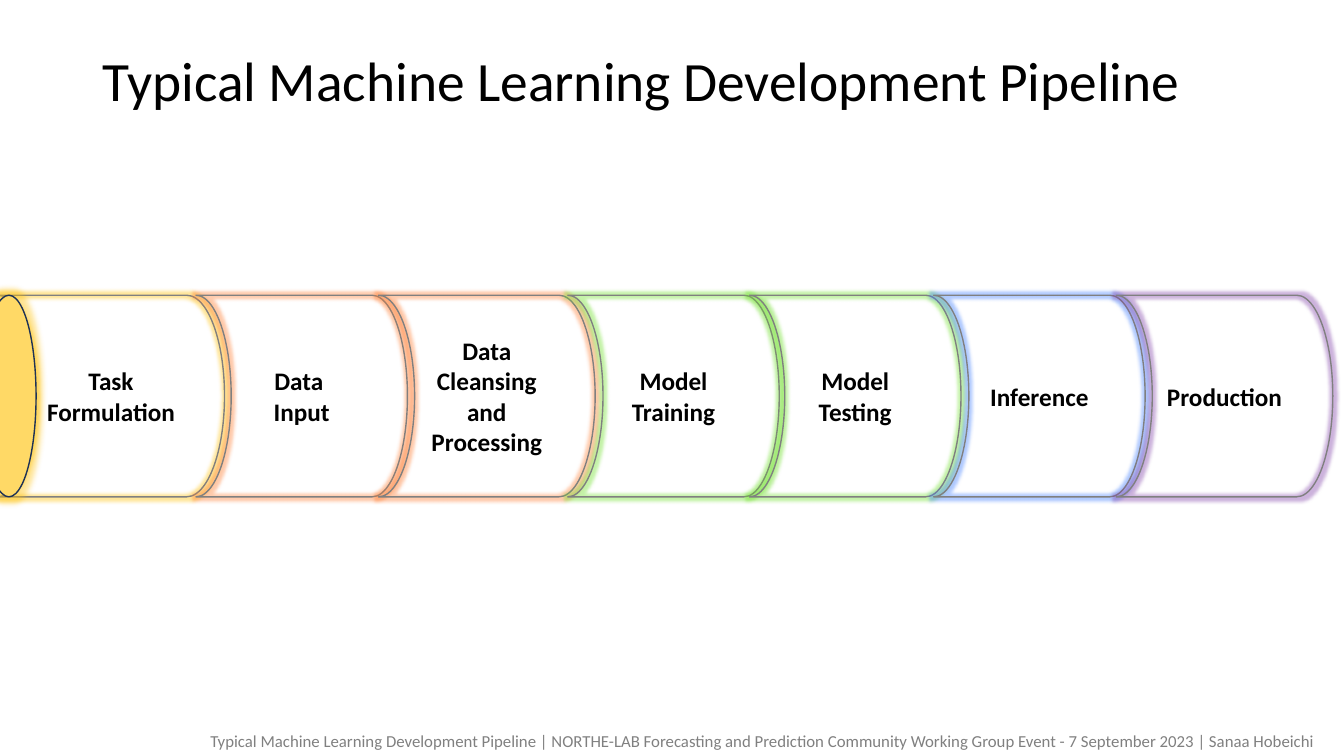
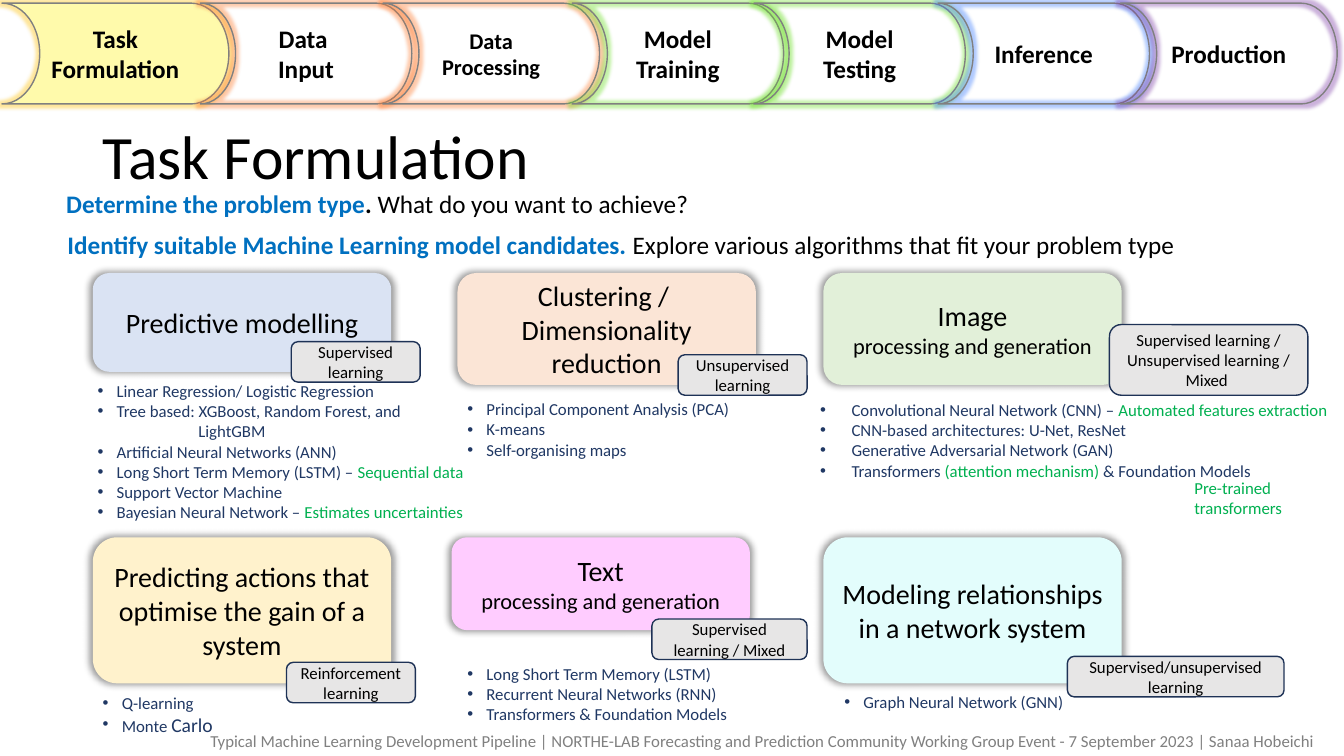
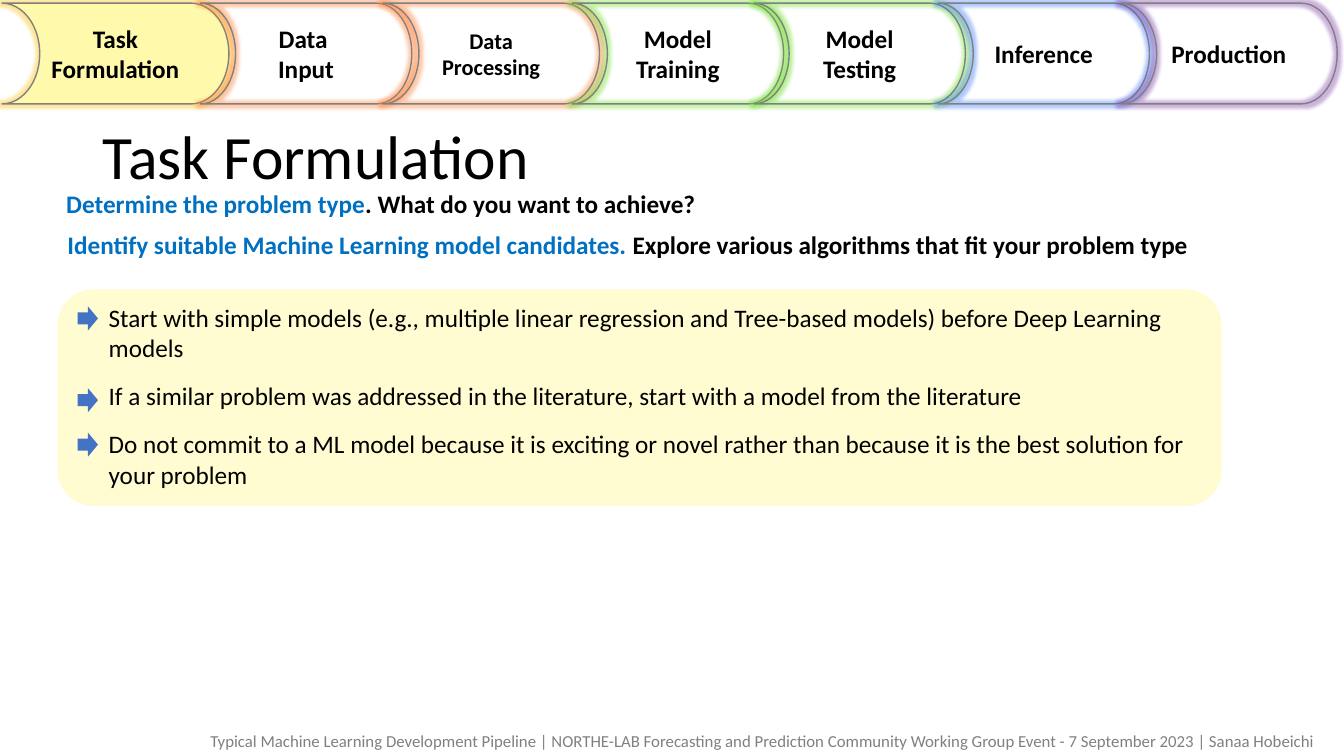
from dataclasses import dataclass

from lxml.etree import SubElement as Sub
from pptx import Presentation
from pptx.dml.color import RGBColor as Rgb
from pptx.enum.shapes import MSO_SHAPE as Kind
from pptx.enum.text import MSO_ANCHOR as Anchor, MSO_AUTO_SIZE as Fit, PP_ALIGN as Align
from pptx.oxml.ns import qn
from pptx.util import Cm, Pt


@dataclass(frozen=True)
class Theme:
    font: str = "Calibri"
    black: str = "000000"
    grey: str = "808080"
    navy: str = "203864"
    edge: str = "1E3256"
    blue: str = "0070C0"
    green: str = "00B050"
    arrow: str = "4472C4"
    tag: str = "E7E6E6"
    panel: str = "FFFCD1"
    active: str = "FFFAAB"
    cap: str = "FFD966"
    gold: str = "FFC000"
    orange: str = "FF7D31"
    lime: str = "6CE026"
    azure: str = "3C7CFF"
    violet: str = "8040A8"
    title: float = 44
    opening: float = 39.6
    card: float = 20
    body: float = 18
    minor: float = 16
    lift: float = 14
    small: float = 12


T = Theme()
FOOTER = ("Typical Machine Learning Development Pipeline | NORTHE-LAB Forecasting and Prediction "
          "Community Working Group Event - 7 September 2023 | Sanaa Hobeichi")

STAGES = [
    (0, 5.72, ["Task Formulation"], T.gold),
    (5, 5.33, ["Data ", "Input"], T.orange),
    (9.6, 5.46, ["Data Cleansing and Processing"], T.orange),
    (14.37, 5.33, ["Model Training"], T.lime),
    (18.95, 5.33, ["Model Testing"], T.lime),
    (23.59, 5.33, ["Inference"], T.azure),
    (28.19, 5.46, ["Production"], T.violet),
]


def style(font, size=None, color=None, bold=None):
    if size:
        font.size = Pt(size)
    if color:
        font.color.rgb = Rgb.from_string(color)
    if bold is not None:
        font.bold = bold


def write(frame, paras, size, color=T.black, bold=False, align=Align.LEFT, gap=0):
    frame.word_wrap = True
    for i, runs in enumerate(paras):
        para = frame.paragraphs[0] if i == 0 else frame.add_paragraph()
        para.alignment = align
        para.font.name = T.font
        style(para.font, size, color, bold)
        if i and gap:
            para.space_before = Pt(gap)
        for part in [runs] if isinstance(runs, str) else runs:
            text, look = (part, {}) if isinstance(part, str) else part
            run = para.add_run()
            run.text = text
            style(run.font, **look)


def place(item, box):
    item.left, item.top, item.width, item.height = map(Cm, box)


def label(slide, box, paras, size, **look):
    frame = slide.shapes.add_textbox(*map(Cm, box)).text_frame
    write(frame, paras, size, **look)
    return frame


def draw(slide, kind, box, fill=None, line=None):
    shape = slide.shapes.add_shape(kind, *map(Cm, box))
    shape.shadow.inherit = False
    if fill:
        shape.fill.solid()
        shape.fill.fore_color.rgb = Rgb.from_string(fill)
    else:
        shape.fill.background()
    if line:
        shape.line.color.rgb = Rgb.from_string(line)
        shape.line.width = Pt(1)
    else:
        shape.line.fill.background()
    shape.text_frame.vertical_anchor = Anchor.MIDDLE
    return shape


def effect(shape, name, color, alpha, **attrs):
    effects = shape._element.spPr.find(qn("a:effectLst"))
    node = Sub(effects, qn(f"a:{name}"), attrs)
    tint = Sub(node, qn("a:srgbClr"), val=color)
    Sub(tint, qn("a:alpha"), val=str(alpha * 1000))


def glow(shape, color, radius):
    effect(shape, "glow", color, 40, rad=str(Pt(radius)))


def bullet(para, indent):
    props = para._p.get_or_add_pPr()
    props.set("marL", str(Cm(indent)))
    props.set("indent", str(-Cm(indent)))
    mark = props.makeelement(qn("a:buChar"), {"char": "•"})
    font = props.makeelement(qn("a:buFont"), {"typeface": "Arial"})
    base = props.find(qn("a:defRPr"))
    base.addprevious(font)
    base.addprevious(mark)


def heading(slide, text, box, size, foot=0.13):
    title = slide.shapes.title
    place(title, box)
    frame = title.text_frame
    frame.auto_size = Fit.NONE
    frame.vertical_anchor = Anchor.MIDDLE
    frame.margin_bottom = Cm(foot)
    write(frame, [text], size)
    frame.paragraphs[0].line_spacing = 0.9


def footer(slide):
    label(slide, (5.05, 18.29, 28.8, 0.76), [FOOTER], T.small, color=T.grey)


def pipeline(slide, left, top, height, active=None, brief=False):
    for i, (shift, width, words, color) in enumerate(STAGES):
        short = brief and i == 2
        pipe = draw(slide, Kind.FLOWCHART_STORED_DATA, (left + shift, top, width, height),
                    T.active if i == active else None, T.grey)
        pipe._element.spPr.xfrm.set("flipH", "1")
        glow(pipe, color, 5)
        write(pipe.text_frame, ["Data Processing"] if short else words,
              T.minor if short else T.body, bold=True, align=Align.CENTER)


def card(slide, box, fill, title, tag, tagbox, items, listbox, indent=0.48):
    left, top = box[:2]

    def inside(part):
        return left + part[0], top + part[1], part[2], part[3]

    face = draw(slide, Kind.ROUNDED_RECTANGLE, box, fill)
    effect(face, "outerShdw", T.black, 40, blurRad=str(Pt(5)), sx="102000", sy="102000",
           algn="ctr", rotWithShape="0")
    write(face.text_frame, title, T.card, align=Align.CENTER)
    frame = label(slide, inside(listbox), items, T.small, color=T.navy)
    for para in frame.paragraphs:
        if para.text == "LightGBM":
            para._p.get_or_add_pPr().set("marL", str(Cm(2.54)))
        else:
            bullet(para, indent)
    badge = draw(slide, Kind.ROUNDED_RECTANGLE, inside(tagbox), T.tag, T.edge)
    write(badge.text_frame, tag, T.small, align=Align.CENTER)


def lead(slide, left, top, heavy):
    blue, plain = {"color": T.blue, "bold": True}, {"bold": heavy}
    label(slide, (left, top, 30.4, 1.02), [[
        ("Determine the problem type", blue), (". ", {"bold": True}),
        ("What do you want to achieve?", plain)]], T.body)
    label(slide, (left + 0.03, top + 1.04, 30.35, 1.02), [[
        ("Identify suitable Machine Learning model candidates. ", blue),
        ("Explore various algorithms that fit your problem type", plain)]], T.body)


def advice(slide, left, top, width, height):
    draw(slide, Kind.ROUNDED_RECTANGLE, (left, top, width, height), T.panel)
    label(slide, (left + 1.04, top + 0.2, 28.65, 5), [
        "Start with simple models (e.g., multiple linear regression and Tree-based models) "
        "before Deep Learning models",
        "If a similar problem was addressed in the literature, start with a model from the literature",
        "Do not commit to a ML model because it is exciting or novel rather than because it is "
        "the best solution for your problem"], T.body, gap=12.8)
    for drop in (0.43, 2.49, 3.61):
        draw(slide, Kind.RIGHT_ARROW, (left + 0.51, top + drop, 0.51, 0.61), T.arrow)


def opening(slide):
    heading(slide, "Typical Machine Learning Development Pipeline",
            (2.34, 1.02, 29.21, 3.68), T.opening, foot=1.66)
    pipeline(slide, -0.06, 7.44, 5.08)
    cap = draw(slide, Kind.OVAL, (-0.46, 7.44, 1.37, 5.08), T.cap, T.edge)
    glow(cap, T.gold, 8)
    footer(slide)


def task(slide, heavy):
    heading(slide, "Task Formulation", (2.34, 2.18, 29.21, 3.68), T.title)
    pipeline(slide, 0.05, 0.08, 2.54, active=0, brief=True)
    lead(slide, 1.42, 4.62, heavy)
    footer(slide)


def models(slide):
    task(slide, False)
    green, minor = {"color": T.green}, {"size": T.minor}
    cols, rows, wide = (2.34, 11.53, 20.75), (6.88, 13.54), 7.52
    making = [("processing and generation", minor)]
    card(slide, (cols[0], rows[0], wide, 2.49), "DAE3F3", ["Predictive modelling"],
         ["Supervised learning"], (5, 1.73, 3.25, 1.02),
         ["Linear Regression/ Logistic Regression",
          "Tree based: XGBoost, Random Forest, and",
          "LightGBM",
          "Artificial Neural Networks (ANN)",
          ["Long Short Term Memory (LSTM) – ", ("Sequential data", green)],
          "Support Vector Machine",
          ["Bayesian Neural Network – ", ("Estimates uncertainties", green)]],
         (-0.13, 2.59, 10.31, 3.84))
    card(slide, (cols[1], rows[0], wide, 2.82), "FBE5D6",
         ["Clustering / ", "Dimensionality reduction"],
         ["Unsupervised learning"], (5.56, 2.06, 3.25, 1.02),
         ["Principal Component Analysis (PCA)", "K-means", "Self-organising maps"],
         (0, 3.05, 8.26, 1.8))
    card(slide, (cols[2], rows[0], wide, 2.82), "E2F0D9", ["Image", making],
         ["Supervised learning /", "Unsupervised learning /", "Mixed "], (7.21, 1.3, 5, 1.78),
         [["Convolutional Neural Network (CNN) – ", ("Automated features extraction", green)],
          "CNN-based architectures: U-Net, ResNet",
          "Generative Adversarial Network (GAN)",
          ["Transformers ", ("(attention mechanism)", green), " & Foundation Models"]],
         (-0.33, 3.07, 13.36, 2.31), indent=0.79)
    card(slide, (cols[0], rows[1], wide, 3.68), "FFF2CC",
         ["Predicting actions that optimise the gain of a system"],
         ["Reinforcement learning"], (4.88, 3.15, 3.25, 1.02),
         ["Q-learning", ["Monte ", ("Carlo", {"size": T.lift})]],
         (0, 3.78, 7.85, 1.37))
    card(slide, (cols[1] - 0.15, rows[1], wide, 2.34), "FFCCFF", ["Text", making],
         ["Supervised learning / Mixed"], (5.05, 2.06, 3.91, 1.02),
         ["Long Short Term Memory (LSTM)", "Recurrent Neural Networks (RNN)",
          "Transformers & Foundation Models"],
         (0.15, 3.05, 7.85, 1.8))
    card(slide, (cols[2], rows[1], wide, 3.68), "E3FDFC",
         ["Modeling relationships in a network system"],
         ["Supervised/unsupervised learning"], (6.15, 3, 5.46, 1.02),
         ["Graph Neural Network (GNN)"], (0.28, 3.76, 8.94, 0.76))
    label(slide, (29.85, 11.91, 2.9, 1.27), ["Pre-trained", "transformers"],
          T.small, color=T.green)


def tips(slide):
    task(slide, True)
    advice(slide, 1.45, 7.29, 29.34, 5.46)


def main():
    deck = Presentation()
    deck.slide_width, deck.slide_height = Cm(33.87), Cm(19.05)
    for build in (opening, models, tips):
        build(deck.slides.add_slide(deck.slide_layouts[5]))
    deck.save("out.pptx")


if __name__ == "__main__":
    main()
